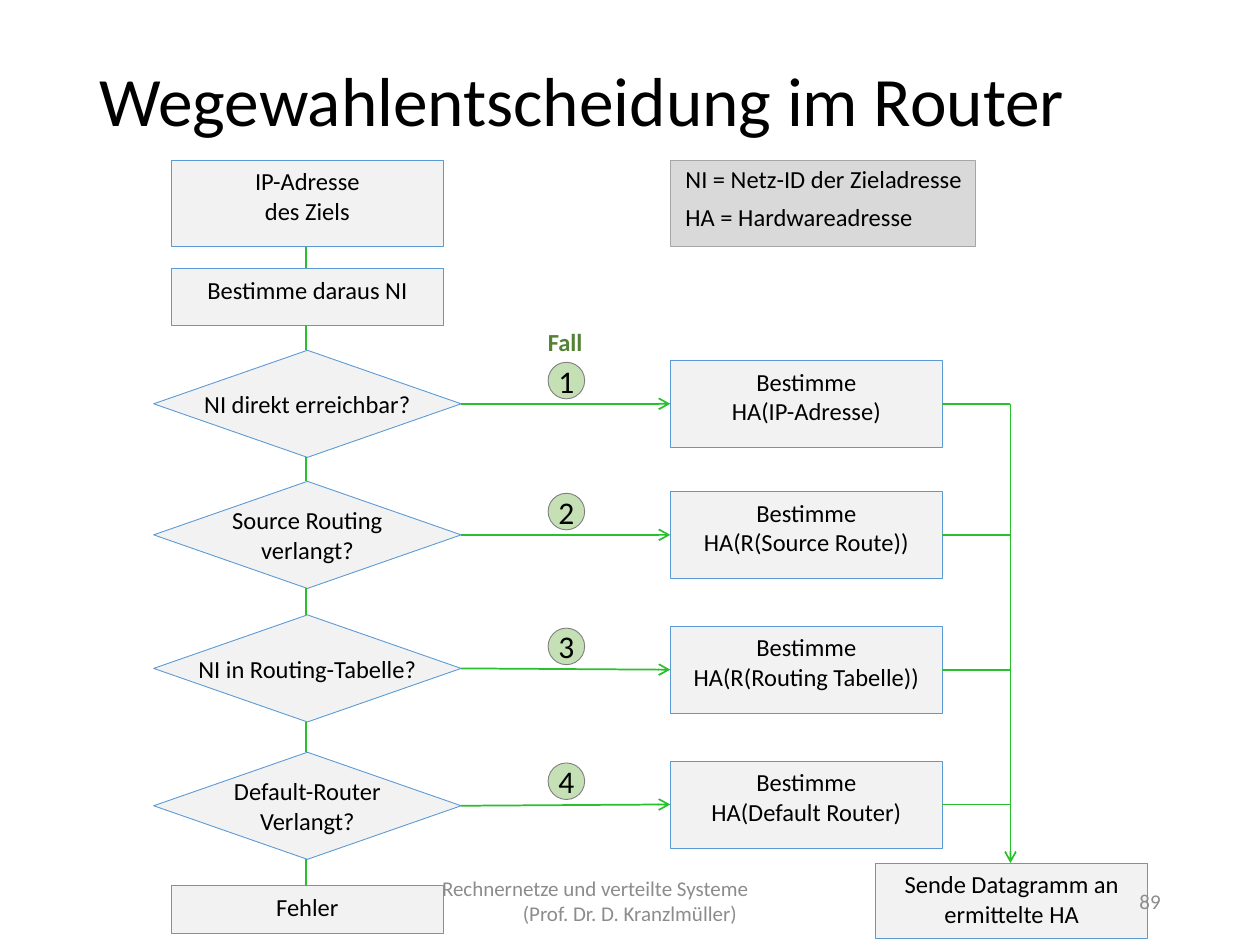
from dataclasses import dataclass

from lxml import etree
from pptx import Presentation
from pptx.dml.color import RGBColor
from pptx.enum.shapes import MSO_CONNECTOR, MSO_SHAPE
from pptx.enum.text import MSO_ANCHOR, PP_ALIGN
from pptx.oxml.ns import qn
from pptx.util import Inches, Pt

RECTANGLE, DIAMOND, OVAL = MSO_SHAPE.RECTANGLE, MSO_SHAPE.DIAMOND, MSO_SHAPE.OVAL
STRAIGHT = MSO_CONNECTOR.STRAIGHT
TOP, MIDDLE = MSO_ANCHOR.TOP, MSO_ANCHOR.MIDDLE
LEFT, CENTER, RIGHT = PP_ALIGN.LEFT, PP_ALIGN.CENTER, PP_ALIGN.RIGHT


@dataclass(frozen=True)
class Theme:
    font: str = "Calibri"
    black: str = "000000"
    muted: str = "8C8C8C"
    heading: str = "548235"
    box: str = "F2F2F2"
    outline: str = "5B9BD5"
    legend: str = "D9D9D9"
    legend_outline: str = "A6A6A6"
    badge: str = "C5E0B4"
    badge_outline: str = "7F7F7F"
    flow: str = "29C02E"
    title_size: float = 39.6
    badge_size: float = 18
    body_size: float = 14
    footer_size: float = 12


THEME = Theme()
presentation = Presentation()
presentation.slide_width, presentation.slide_height = Inches(10), Inches(7.5)
slide = presentation.slides.add_slide(presentation.slide_layouts[6])


def add_box(bounds, lines, kind=None, fill=THEME.box, outline=THEME.outline,
            size=THEME.body_size, color=THEME.black, align=CENTER, anchor=TOP, wrap=True):
    """Add a preset shape, or a text box if kind is None, with one paragraph per line."""
    bounds = [Inches(value) for value in bounds]
    if kind is None:
        shape = slide.shapes.add_textbox(*bounds)
    else:
        shape = slide.shapes.add_shape(kind, *bounds)
        shape.shadow.inherit = False
        shape.fill.solid()
        shape.fill.fore_color.rgb = RGBColor.from_string(fill)
        shape.line.color.rgb = RGBColor.from_string(outline)
        shape.line.width = Pt(0.5)
    frame = shape.text_frame
    frame.word_wrap = wrap
    frame.vertical_anchor = anchor
    if not wrap:
        frame.margin_left = frame.margin_right = 0
        frame.margin_top = frame.margin_bottom = 0
    for index, line in enumerate(lines):
        paragraph = frame.paragraphs[0] if index == 0 else frame.add_paragraph()
        paragraph.text = line
        paragraph.alignment = align
        paragraph.font.name = THEME.font
        paragraph.font.size = Pt(size)
        paragraph.font.color.rgb = RGBColor.from_string(color)
    return shape


def add_flow(x1, y1, x2, y2, arrow=False):
    connector = slide.shapes.add_connector(
        STRAIGHT, Inches(x1), Inches(y1), Inches(x2), Inches(y2))
    connector.line.color.rgb = RGBColor.from_string(THEME.flow)
    connector.line.width = Pt(1)
    if arrow:
        etree.SubElement(connector.line._get_or_add_ln(), qn("a:tailEnd"), type="arrow")
    etree.SubElement(connector._element.spPr, qn("a:effectLst"))


# Title and footer
title = add_box((0.69, 0.4, 8.62, 0.86), ["Wegewahlentscheidung im Router"],
                size=THEME.title_size, align=LEFT, anchor=MIDDLE)
title.text_frame.paragraphs[0].line_spacing = 0.9
footer = add_box((3.31, 6.95, 3.38, 0.4),
                 ["Rechnernetze und verteilte Systeme", "(Prof. Dr. D. Kranzlmüller)"],
                 size=THEME.footer_size, color=THEME.muted, anchor=MIDDLE)
first_line = footer.text_frame.paragraphs[0]
first_line.alignment = LEFT
first_line._p.get_or_add_pPr().set("marL", str(Inches(0.1)))

# Start and end of the decision column
STEP_LEFT, BOX_WIDTH, BOX_HEIGHT = 1.36, 2.16, 0.69
steps = [
    (1.27, BOX_HEIGHT, ["IP-Adresse", "des Ziels"]),
    (2.13, 0.45, ["Bestimme daraus NI"]),
    (7.03, 0.38, ["Fehler"]),
]
for top, height, lines in steps:
    add_box((STEP_LEFT, top, BOX_WIDTH, height), lines, RECTANGLE)

# Cases: diamond top, question, action
DIAMOND_LEFT, DIAMOND_WIDTH, DIAMOND_HEIGHT = 1.22, 2.44, 0.85
ACTION_LEFT, BUS_X, SEND_TOP = 5.32, 8.02, 6.85
BADGE = 0.29
cases = [
    (2.78, 2.86, ["NI direkt erreichbar?"], "HA(IP-Adresse)"),
    (3.82, 3.9, ["Source Routing", "verlangt?"], "HA(R(Source Route))"),
    (4.88, 4.97, ["NI in Routing-Tabelle?"], "HA(R(Routing Tabelle))"),
    (5.97, 6.04, ["Default-Router", "Verlangt?"], "HA(Default Router)"),
]
for number, (top, action_top, question, action) in enumerate(cases, start=1):
    middle = top + DIAMOND_HEIGHT / 2
    action_middle = action_top + BOX_HEIGHT / 2
    add_box((DIAMOND_LEFT, top, DIAMOND_WIDTH, DIAMOND_HEIGHT), question, DIAMOND,
            anchor=MIDDLE, wrap=False)
    add_box((ACTION_LEFT, action_top, BOX_WIDTH, BOX_HEIGHT), ["Bestimme", action], RECTANGLE)
    add_flow(DIAMOND_LEFT + DIAMOND_WIDTH, middle, ACTION_LEFT, action_middle, arrow=True)
    add_flow(ACTION_LEFT + BOX_WIDTH, action_middle, BUS_X, action_middle)
    add_box((4.35, action_middle - 0.33, BADGE, BADGE), [str(number)], OVAL,
            fill=THEME.badge, outline=THEME.badge_outline, size=THEME.badge_size,
            anchor=MIDDLE, wrap=False)

# Vertical links between neighbouring steps, and the common line to the last step
column = sorted([(top, height) for top, height, _ in steps]
                + [(case[0], DIAMOND_HEIGHT) for case in cases])
for (top, height), (next_top, _) in zip(column, column[1:]):
    add_flow(2.43, top + height, 2.43, next_top)
add_flow(BUS_X, cases[0][1] + BOX_HEIGHT / 2, BUS_X, SEND_TOP, arrow=True)
add_box((6.95, SEND_TOP, BOX_WIDTH, 0.6), ["Sende Datagramm an ermittelte HA"], RECTANGLE)

# Legend, column heading and slide number
legend = add_box((ACTION_LEFT, 1.27, 2.42, BOX_HEIGHT),
                 ["NI = Netz-ID der Zieladresse", "HA = Hardwareadresse"], RECTANGLE,
                 fill=THEME.legend, outline=THEME.legend_outline, align=LEFT, wrap=False)
legend.text_frame.margin_left = Inches(0.12)
legend.text_frame.margin_top = Inches(0.03)
legend.text_frame.paragraphs[1].space_before = Pt(5)
heading = add_box((4.24, 2.54, 0.49, 0.34), ["Fall"], color=THEME.heading,
                  anchor=MIDDLE, wrap=False)
heading.text_frame.paragraphs[0].font.bold = True
add_box((7.06, 6.95, 2.25, 0.4), ["89"], size=THEME.footer_size, color=THEME.muted,
        align=RIGHT, anchor=MIDDLE)

presentation.save("out.pptx")
